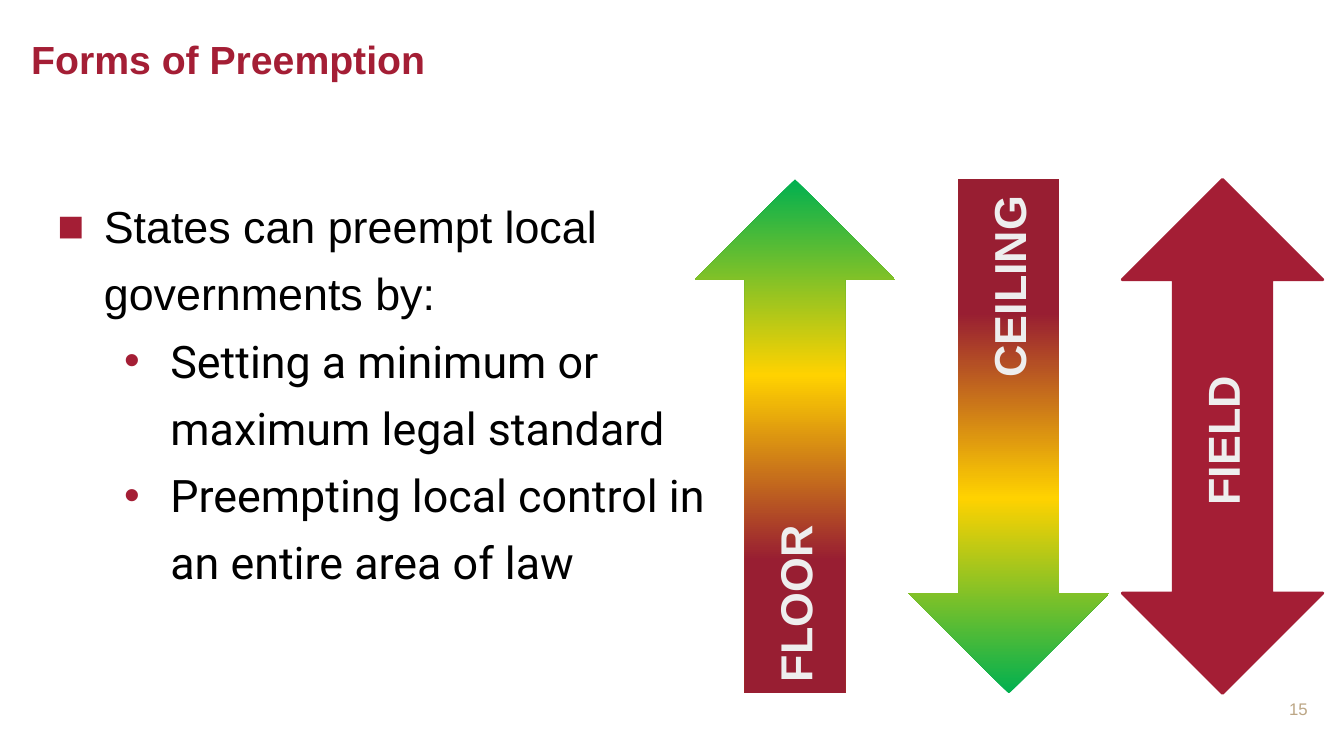
from lxml import etree
from pptx import Presentation
from pptx import util as u
from pptx.dml.color import RGBColor
from pptx.enum import shapes, text
from pptx.oxml import parse_xml
from pptx.oxml.ns import nsdecls, qn

# Content
CRIMSON, BLACK, PALE, TAN = "A41E35", "000000", "EEEEEE", "BCA685"
TITLE = "Forms of Preemption"
PAGE_NUMBER = "15"
POINTS = [  # level, words, font
    (0, "States can preempt local governments by:", "Arial"),
    (1, "Setting a minimum or maximum legal standard", "Roboto"),
    (1, "Preempting local control in an entire area of law", "Roboto"),
]
BULLETS = [("■", 0.67), ("•", 1.33)]  # mark and text indent by level
HANGING = 0.46
STANDARD_STOPS = [(0, "00B050"), (38, "FFD200"), (74, "981E32")]
UP, BOTH = shapes.MSO_SHAPE.UP_ARROW, shapes.MSO_SHAPE.UP_DOWN_ARROW
ARROWS = [  # label, shape, rotation, label length, label centre height
    ("FLOOR", UP, 0, 3.03, 5.35),
    ("CEILING", UP, 180, 3.03, 2.33),
    ("FIELD", BOTH, 0, 1.57, 4.33),
]
ARROW_LEFT, ARROW_TOP, ARROW_STEP = 6.89, 1.78, 2.12
ARROW_WIDTH, ARROW_HEIGHT, LABEL_HEIGHT = 1.99, 5.1, 0.64


def color(value):
    return RGBColor.from_string(value)


def format_text(para, words, **values):
    span = para.add_run()
    span.text = words
    span.font.color.rgb = color(values.pop("color"))
    for name, value in values.items():
        setattr(span.font, name, value)


def place(item, left, top, width, height):
    lengths = dict(left=left, top=top, width=width, height=height)
    for name, value in lengths.items():
        setattr(item, name, u.Inches(value))


def set_frame(box, inset, anchor):
    frame = box.text_frame
    frame.word_wrap = True
    frame.auto_size = text.MSO_AUTO_SIZE.NONE
    frame.vertical_anchor = anchor
    for side in ("left", "top", "right", "bottom"):
        setattr(frame, f"margin_{side}", u.Inches(inset))
    return frame


def add_text(page, at, inset=0.13, anchor=text.MSO_ANCHOR.TOP):
    box = page.shapes.add_textbox(*map(u.Inches, at))
    return box, set_frame(box, inset, anchor)


def add_bullet(para, mark, indent):
    props = para._p.get_or_add_pPr()
    props.set("marL", str(u.Inches(indent)))
    props.set("indent", str(-u.Inches(HANGING)))
    tint = etree.SubElement(props, qn("a:buClr"))
    etree.SubElement(tint, qn("a:srgbClr"), val=CRIMSON)
    etree.SubElement(props, qn("a:buFont"), typeface="Arial")
    etree.SubElement(props, qn("a:buChar"), char=mark)


def fill_gradient(shape, stops):
    marks = "".join(
        f'<a:gs pos="{pos * 1000}"><a:srgbClr val="{value}"/></a:gs>'
        for pos, value in stops)
    gradient = parse_xml(
        f'<a:gradFill {nsdecls("a")} rotWithShape="1"><a:gsLst>{marks}</a:gsLst>'
        '<a:lin ang="5400000" scaled="0"/></a:gradFill>')
    shape._element.spPr.find(qn("a:prstGeom")).addnext(gradient)


deck = Presentation()
deck.slide_width, deck.slide_height = u.Inches(13.33), u.Inches(7.5)
page = deck.slides.add_slide(deck.slide_layouts[5])

# Title
title = page.shapes.title
place(title, 0.18, 0.19, 12.21, 0.84)
para = set_frame(title, 0.13, text.MSO_ANCHOR.MIDDLE).paragraphs[0]
para.alignment = text.PP_ALIGN.LEFT
para.line_spacing = 0.9
format_text(para, TITLE, name="Arial", size=u.Pt(28), bold=True, color=CRIMSON)

# Bulleted points
box, frame = add_text(page, (0.23, 1.71, 6.91, 4.26))
for number, (level, words, font) in enumerate(POINTS):
    para = frame.add_paragraph() if number else frame.paragraphs[0]
    para.level = level
    para.line_spacing = 1.25
    add_bullet(para, *BULLETS[level])
    format_text(para, words, name=font, size=u.Pt(32), color=BLACK)

# Arrows with upright labels
for number, (label, kind, rotation, length, middle) in enumerate(ARROWS):
    left = ARROW_LEFT + number * ARROW_STEP
    at = (left, ARROW_TOP, ARROW_WIDTH, ARROW_HEIGHT)
    arrow = page.shapes.add_shape(kind, *map(u.Inches, at))
    arrow.shadow.inherit = False
    arrow.rotation = rotation
    if kind == UP:
        fill_gradient(arrow, STANDARD_STOPS)
        arrow.line.fill.background()
    else:
        arrow.adjustments[1] = 0.49
        arrow.fill.solid()
        arrow.fill.fore_color.rgb = color(CRIMSON)
        arrow.line.color.rgb = color(CRIMSON)
        arrow.line.width = u.Pt(2)

    center = left + ARROW_WIDTH / 2
    at = (center - length / 2, middle - LABEL_HEIGHT / 2, length, LABEL_HEIGHT)
    box, frame = add_text(page, at, inset=0.1)
    frame.margin_top = frame.margin_bottom = u.Inches(0.05)
    box.rotation = 270
    format_text(frame.paragraphs[0], label, name="Arial", size=u.Pt(32),
                bold=True, color=PALE)

# Page number
box, frame = add_text(page, (12.51, 6.79, 0.59, 0.49), anchor=text.MSO_ANCHOR.MIDDLE)
frame.paragraphs[0].alignment = text.PP_ALIGN.RIGHT
format_text(frame.paragraphs[0], PAGE_NUMBER, name="Arial", size=u.Pt(12), color=TAN)

deck.save("out.pptx")
